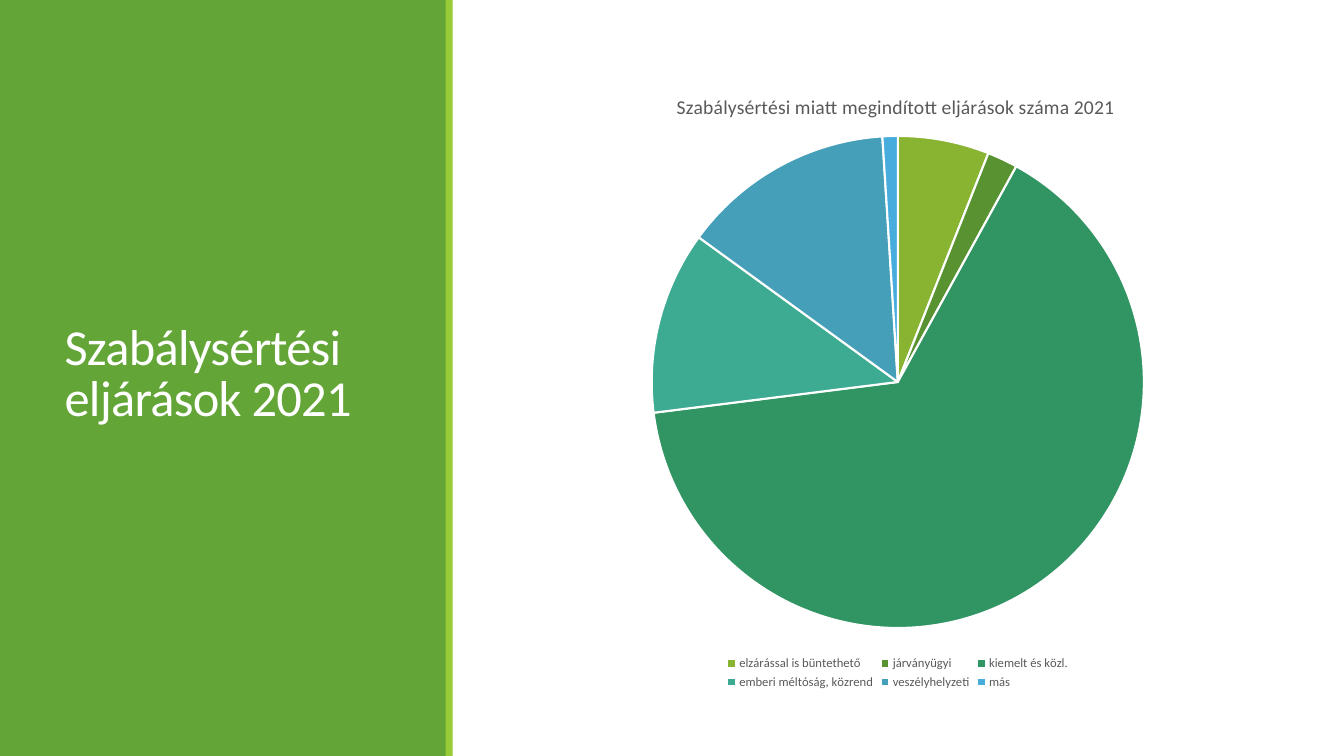
from dataclasses import dataclass

from lxml import etree
from pptx import Presentation
from pptx import util as u
from pptx.chart.data import CategoryChartData
from pptx.dml.color import RGBColor
from pptx.enum import chart as ch, shapes, text
from pptx.oxml import parse_xml
from pptx.oxml.ns import nsdecls

WIDTH, HEIGHT = u.Inches(13.33), u.Inches(7.5)
FONT = "Calibri"
WHITE = RGBColor(0xFF, 0xFF, 0xFF)
GREEN = RGBColor(0x63, 0xA5, 0x37)
LIME = RGBColor(0x99, 0xCB, 0x38)
GREY = RGBColor(0x59, 0x59, 0x59)


@dataclass(frozen=True)
class Panel:
    left: float  # inches
    width: float
    color: RGBColor


@dataclass(frozen=True)
class Slice:
    label: str
    percent: int
    color: RGBColor


PANELS = [Panel(0, 4.43, GREEN), Panel(4.42, 0.07, LIME)]
SLICES = [
    Slice("elzárással is büntethető", 6, RGBColor(0x88, 0xB4, 0x32)),
    Slice("járványügyi", 2, RGBColor(0x58, 0x92, 0x31)),
    Slice("kiemelt és közl.", 65, RGBColor(0x31, 0x94, 0x63)),
    Slice("emberi méltóság, közrend", 12, RGBColor(0x3C, 0xAB, 0x91)),
    Slice("veszélyhelyzeti", 14, RGBColor(0x45, 0x9F, 0xB8)),
    Slice("más", 1, RGBColor(0x48, 0xAD, 0xDD)),
]


def add_panel(slide, panel: Panel) -> None:
    """Draw a full-height vertical band."""
    shape = slide.shapes.add_shape(
        shapes.MSO_SHAPE.RECTANGLE, u.Inches(panel.left), 0, u.Inches(panel.width), HEIGHT)
    shape.shadow.inherit = False
    shape.fill.solid()
    shape.fill.fore_color.rgb = panel.color
    shape.line.fill.background()


def format_title(title) -> None:
    title.left, title.top = u.Inches(0.54), u.Inches(0.57)
    title.width, title.height = u.Inches(3.37), u.Inches(6.31)
    frame = title.text_frame
    frame.text = "Szabálysértési eljárások 2021"
    frame.word_wrap = True
    frame.auto_size = text.MSO_AUTO_SIZE.NONE
    frame.vertical_anchor = text.MSO_ANCHOR.MIDDLE
    paragraph = frame.paragraphs[0]
    paragraph.alignment = text.PP_ALIGN.LEFT
    paragraph.line_spacing = 0.85
    run = paragraph.runs[0]
    run.font.name, run.font.size = FONT, u.Pt(36)
    run.font.color.rgb = WHITE
    run.font._element.set("spc", "-50")


def manual_layout(**shares: float) -> etree._Element:
    """Build a chart layout from shares of the chart's size."""
    inner = '<c:layoutTarget val="inner"/>' if "w" in shares else ""
    modes = '<c:xMode val="edge"/><c:yMode val="edge"/>'
    values = "".join(f'<c:{name} val="{share}"/>' for name, share in shares.items())
    return parse_xml(f'<c:layout {nsdecls("c")}><c:manualLayout>{inner}{modes}{values}'
                     '</c:manualLayout></c:layout>')


def add_pie(slide) -> None:
    data = CategoryChartData()
    data.categories = [part.label for part in SLICES]
    data.add_series("Eljárások", [part.percent for part in SLICES])
    chart = slide.shapes.add_chart(
        ch.XL_CHART_TYPE.PIE, u.Inches(5.19), u.Inches(0.7),
        u.Inches(7.43), u.Inches(6.18), data).chart
    chart.font.name, chart.font.size = FONT, u.Pt(10)

    # Chart title
    chart.has_title = True
    frame = chart.chart_title.text_frame
    frame.text = "Szabálysértési miatt megindított eljárások száma 2021"
    font = frame.paragraphs[0].runs[0].font
    font.name, font.size, font.bold = FONT, u.Pt(14), False
    font.color.rgb = GREY
    title_element = chart.chart_title._element
    for old in title_element.findall("{*}layout"):
        title_element.remove(old)
    title_element.find("{*}tx").addnext(manual_layout(x=0.2, y=0.03))

    # Legend
    chart.has_legend = True
    chart.legend.position = ch.XL_LEGEND_POSITION.BOTTOM
    chart.legend.include_in_layout = False
    chart.legend.font.name, chart.legend.font.size = FONT, u.Pt(9)
    chart.legend.font.color.rgb = GREY

    # Pie position and slice colours
    plot = chart.plots[0]
    plot.vary_by_categories = True
    plot_area = plot._element.getparent()
    for old in plot_area.findall("{*}layout"):
        plot_area.remove(old)
    plot_area.insert(0, manual_layout(x=0.17, y=0.105, w=0.66, h=0.79))
    for index, part in enumerate(SLICES):
        shape_format = plot.series[0].points[index].format
        shape_format.fill.solid()
        shape_format.fill.fore_color.rgb = part.color
        shape_format.line.color.rgb = WHITE
        shape_format.line.width = u.Pt(1.5)


def main() -> None:
    presentation = Presentation()
    presentation.slide_width, presentation.slide_height = WIDTH, HEIGHT
    slide = presentation.slides.add_slide(presentation.slide_layouts[5])
    for panel in PANELS:
        add_panel(slide, panel)
    # Bring the title in front of the bands
    title = slide.shapes.title
    format_title(title)
    slide.shapes._spTree.append(title._element)
    add_pie(slide)
    presentation.save("out.pptx")


if __name__ == "__main__":
    main()
